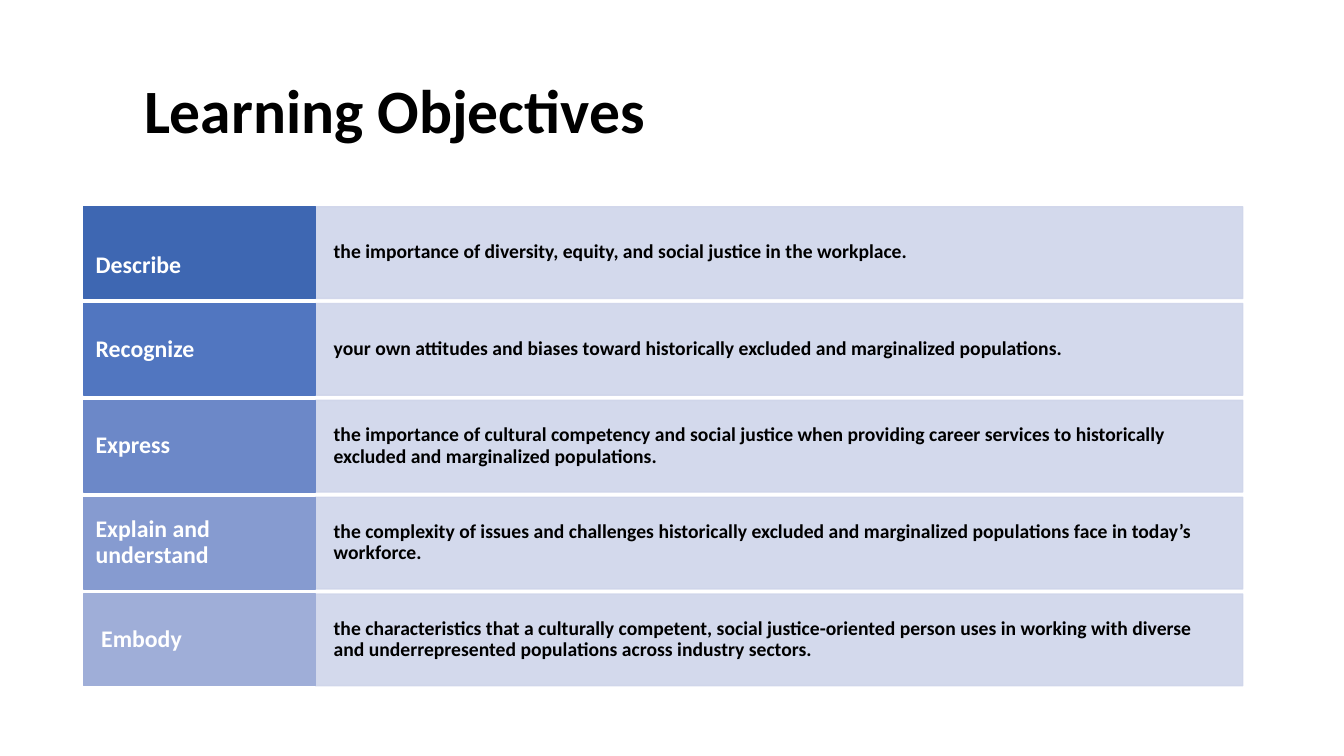
from lxml.etree import SubElement
from pptx import Presentation
from pptx.dml.color import RGBColor
from pptx.enum.shapes import MSO_SHAPE
from pptx.enum.text import MSO_ANCHOR, PP_ALIGN
from pptx.oxml.ns import qn
from pptx.util import Cm, Pt

# Content: verb, label colour, objective, extra label insets (left, top) in cm
TITLE = "Learning Objectives"
OBJECTIVES = [
    ("Describe", "3E67B2",
     "the importance of diversity, equity, and social justice in the workplace.", (0, 0.66)),
    ("Recognize", "5176C0",
     "your own attitudes and biases toward historically excluded and marginalized populations.",
     (0, 0)),
    ("Express", "6C88C8",
     "the importance of cultural competency and social justice when providing career services "
     "to historically excluded and marginalized populations.", (0, 0)),
    ("Explain and understand", "869BD0",
     "the complexity of issues and challenges historically excluded and marginalized "
     "populations face in today’s workforce.", (0, 0)),
    ("Embody", "9FAED8",
     "the characteristics that a culturally competent, social justice-oriented person uses in "
     "working with diverse and underrepresented populations across industry sectors.", (0.14, 0)),
]
BLACK, WHITE, PALE_BLUE = "000000", "FFFFFF", "CFD5EA"

# Layout in cm
LABEL_LEFT, LABEL_WIDTH = 2.11, 5.84
OBJECTIVE_LEFT, OBJECTIVE_WIDTH = LABEL_LEFT + LABEL_WIDTH, 23.37
FIRST_TOP, ROW_HEIGHT, ROW_STEP = 5.21, 2.31, 2.44


def color(value):
    return RGBColor.from_string(value)


def set_opacity(fill_parent, percent):
    rgb = fill_parent.find(qn("a:solidFill")).find(qn("a:srgbClr"))
    SubElement(rgb, qn("a:alpha"), val=str(percent * 1000))


def write_text(shape, text, *, size, font_color, insets):
    frame = shape.text_frame
    frame.word_wrap = True
    frame.vertical_anchor = MSO_ANCHOR.MIDDLE
    frame.margin_left, frame.margin_top, frame.margin_right, frame.margin_bottom = map(Cm, insets)
    paragraph = frame.paragraphs[0]
    paragraph.alignment = PP_ALIGN.LEFT
    paragraph.line_spacing = 0.9
    run = paragraph.add_run()
    run.text = text
    run.font.name = "Calibri"
    run.font.size = Pt(size)
    run.font.bold = True
    run.font.color.rgb = color(font_color)


def add_box(slide, left, top, width, fill, opacity=100):
    box = slide.shapes.add_shape(
        MSO_SHAPE.RECTANGLE, Cm(left), Cm(top), Cm(width), Cm(ROW_HEIGHT))
    box.shadow.inherit = False
    box.fill.solid()
    box.fill.fore_color.rgb = color(fill)
    box.line.color.rgb = color(fill)
    box.line.width = Pt(1)
    if opacity < 100:
        properties = box.element.spPr
        set_opacity(properties, opacity)
        set_opacity(properties.find(qn("a:ln")), opacity)
    return box


def main():
    presentation = Presentation()
    presentation.slide_width, presentation.slide_height = Cm(33.87), Cm(19.05)
    slide = presentation.slides.add_slide(presentation.slide_layouts[6])

    # Title
    title = slide.shapes.add_textbox(Cm(2.33), Cm(1.01), Cm(29.21), Cm(3.68))
    write_text(title, TITLE, size=44, font_color=BLACK, insets=(1.3, 0.13, 0.25, 0.13))

    # One row per objective
    for row, (verb, shade, objective, (extra_left, extra_top)) in enumerate(OBJECTIVES):
        top = FIRST_TOP + row * ROW_STEP
        objective_box = add_box(slide, OBJECTIVE_LEFT, top, OBJECTIVE_WIDTH, PALE_BLUE, opacity=90)
        write_text(objective_box, objective, size=14, font_color=BLACK,
                   insets=(0.46, 0.58, 0.46, 0.58))
        label_box = add_box(slide, LABEL_LEFT, top, LABEL_WIDTH, shade)
        write_text(label_box, verb, size=17, font_color=WHITE,
                   insets=(0.3 + extra_left, 0.23 + extra_top, 0.3, 0.23))

    presentation.save("out.pptx")


if __name__ == "__main__":
    main()
